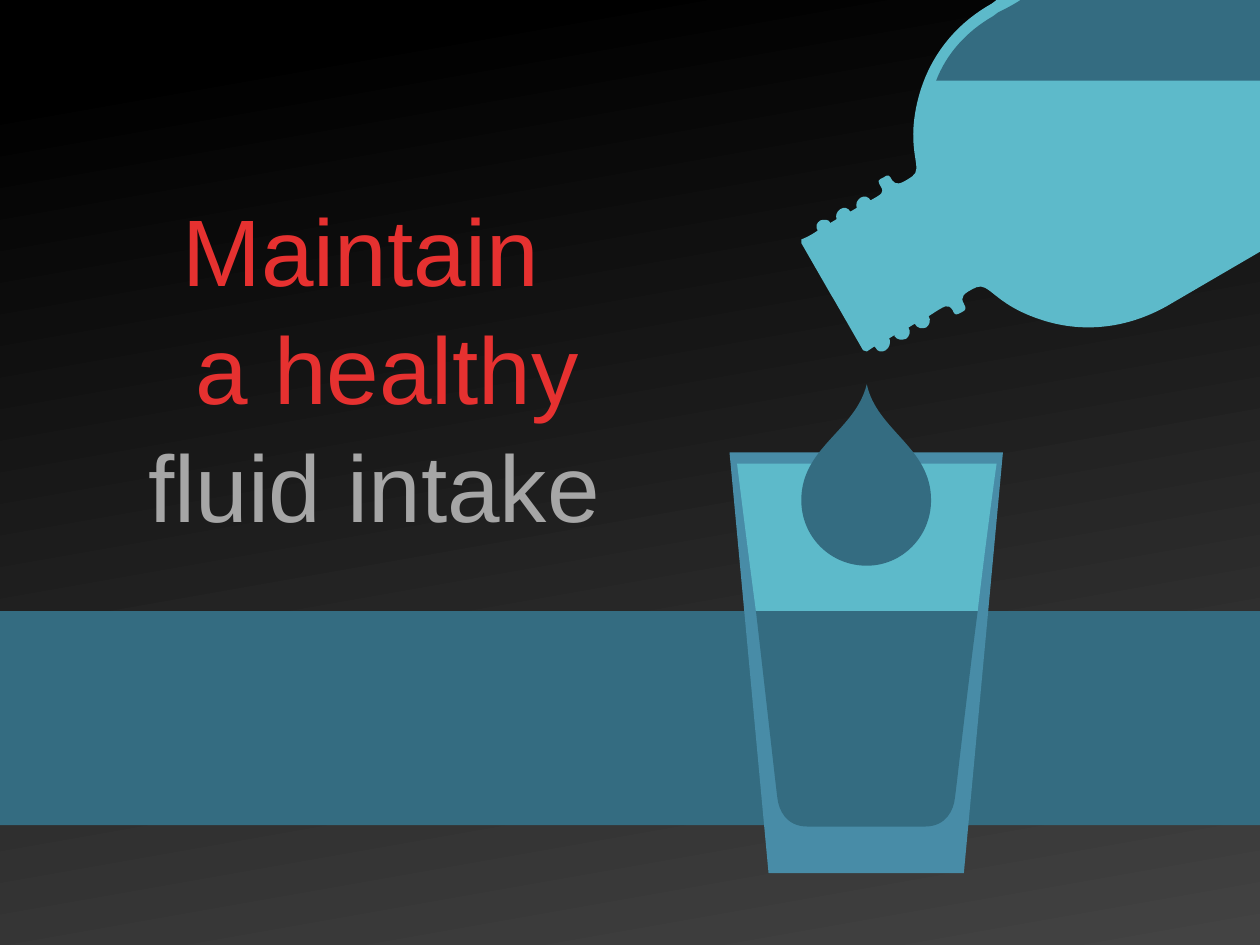
from dataclasses import dataclass

from pptx import Presentation
from pptx.dml.color import RGBColor
from pptx.enum import shapes, text
from pptx.oxml.ns import qn
from pptx.util import Inches, Pt


@dataclass(frozen=True)
class Theme:
    font: str = "Arial"
    headline_size: int = 54
    line_spacing: float = 1.04
    night: str = "000000"
    dusk: str = "434343"
    deep_water: str = "346C81"
    light_water: str = "5DBACA"
    glass: str = "488CA7"
    accent: str = "E63130"
    muted: str = "A6A6A6"


# Outlines in inches: a pair is a corner, six numbers are a Bézier curve.
GLASS = [(5.79, 3.59), (6.1, 6.93), (7.65, 6.93), (7.96, 3.59)]
GLASS_AIR = [(7.91, 3.68), (5.85, 3.68), (5.85, 3.68, 5.92, 4.25, 6, 4.85),
             (7.76, 4.85), (7.83, 4.25, 7.91, 3.68, 7.91, 3.68)]
GLASS_WATER = [
    (6, 4.85), (6.08, 5.54, 6.16, 6.26, 6.17, 6.33),
    (6.18, 6.43, 6.24, 6.56, 6.41, 6.56), (7.34, 6.56),
    (7.51, 6.56, 7.57, 6.43, 7.58, 6.33), (7.59, 6.26, 7.67, 5.54, 7.76, 4.85),
]
DROP = [
    (6.88, 3.05), (6.79, 3.42, 6.36, 3.55, 6.36, 3.97),
    (6.36, 4.26, 6.59, 4.49, 6.88, 4.49), (7.16, 4.49, 7.39, 4.26, 7.39, 3.97),
    (7.39, 3.55, 6.96, 3.42, 6.88, 3.05),
]
BOTTLE = [
    (7.91, 0), (7.9, 0.01, 7.88, 0.02, 7.87, 0.03),
    (7.55, 0.21, 7.34, 0.5, 7.27, 0.86), (7.2, 1.22, 7.33, 1.34, 7.24, 1.4),
    (7.14, 1.47, 7.11, 1.47, 7.08, 1.43), (7.06, 1.39, 7.05, 1.38, 7.01, 1.41),
    (6.97, 1.43, 6.96, 1.43, 6.99, 1.48), (7.02, 1.53, 7, 1.54, 6.91, 1.59),
    (6.89, 1.56, 6.86, 1.55, 6.83, 1.57), (6.8, 1.59, 6.79, 1.62, 6.8, 1.65),
    (6.75, 1.68), (6.73, 1.65, 6.7, 1.64, 6.67, 1.66),
    (6.64, 1.68, 6.63, 1.71, 6.64, 1.74), (6.59, 1.77),
    (6.58, 1.74, 6.54, 1.74, 6.51, 1.75), (6.48, 1.77, 6.47, 1.8, 6.49, 1.83),
    (6.42, 1.88, 6.36, 1.9, 6.36, 1.9), (6.36, 1.93), (6.59, 2.33),
    (6.62, 2.38), (6.85, 2.78), (6.88, 2.79), (6.94, 2.75),
    (6.95, 2.76), (6.96, 2.79, 7, 2.8, 7.03, 2.78),
    (7.06, 2.76, 7.07, 2.72, 7.06, 2.69), (7.05, 2.69), (7.1, 2.66),
    (7.1, 2.67), (7.12, 2.7, 7.16, 2.7, 7.19, 2.69),
    (7.22, 2.67, 7.23, 2.63, 7.21, 2.6), (7.26, 2.57),
    (7.28, 2.61, 7.32, 2.61, 7.35, 2.6), (7.38, 2.58, 7.39, 2.54, 7.37, 2.51),
    (7.51, 2.42, 7.52, 2.41, 7.56, 2.46), (7.58, 2.51, 7.59, 2.5, 7.63, 2.48),
    (7.67, 2.46, 7.67, 2.45, 7.65, 2.41), (7.62, 2.36, 7.64, 2.33, 7.75, 2.28),
    (7.85, 2.24, 7.89, 2.41, 8.24, 2.53), (8.58, 2.65, 8.94, 2.61, 9.26, 2.43),
    (10.22, 1.87), (11.88, 0.91), (12.28, 0.69), (12.28, 0),
]
BOTTLE_WATER = [
    (8.1, 0), (8.04, 0.04, 7.98, 0.07, 7.92, 0.1), (7.88, 0.13),
    (7.67, 0.25, 7.51, 0.43, 7.43, 0.64), (12.18, 0.64), (12.28, 0.58), (12.28, 0),
]


class SlideArtist:
    def __init__(self, slide, theme):
        self.slide = slide
        self.theme = theme

    def background(self):
        fill = self.slide.background.fill
        fill.gradient()
        fill.gradient_angle = 280  # counter-clockwise
        stops = ((0.08, self.theme.night), (1, self.theme.dusk))
        for stop, (position, color) in zip(fill.gradient_stops, stops):
            stop.position = position
            stop.color.rgb = RGBColor.from_string(color)

    def paint(self, shape, color):
        shape.shadow.inherit = False
        shape.fill.solid()
        shape.fill.fore_color.rgb = RGBColor.from_string(color)
        shape.line.fill.background()

    def band(self, left, top, width, height, color):
        band = self.slide.shapes.add_shape(
            shapes.MSO_SHAPE.RECTANGLE, *map(Inches, (left, top, width, height)))
        self.paint(band, color)

    def headline(self, left, top, width, height, lines):
        box = self.slide.shapes.add_textbox(*map(Inches, (left, top, width, height)))
        frame = box.text_frame
        frame.word_wrap = True
        frame.auto_size = text.MSO_AUTO_SIZE.SHAPE_TO_FIT_TEXT
        paragraph = frame.paragraphs[0]
        paragraph.alignment = text.PP_ALIGN.CENTER
        paragraph.line_spacing = self.theme.line_spacing
        paragraph.font.name = self.theme.font
        paragraph.font.size = Pt(self.theme.headline_size)
        for index, (words, color) in enumerate(lines):
            if index:
                paragraph.add_line_break()
            run = paragraph.add_run()
            run.text = words
            run.font.color.rgb = RGBColor.from_string(color)

    def outline(self, group, segments, color):
        """Draw a closed outline, turning triples of points into Bézier curves."""
        start, *steps = [list(zip(s[::2], s[1::2])) for s in segments]
        builder = group.shapes.build_freeform(*map(Inches, start[0]))
        builder.add_line_segments(
            [(Inches(x), Inches(y)) for step in steps for x, y in step], close=True)
        shape = builder.convert_to_shape()
        nodes = iter(list(shape._element.iter(qn("a:lnTo"))))
        for step in steps:
            first, *rest = [next(nodes) for _ in step]
            if rest:
                first.tag = qn("a:cubicBezTo")
            for node in rest:
                first.append(node[0])
                node.getparent().remove(node)
        self.paint(shape, color)


def main():
    deck = Presentation()
    deck.slide_width, deck.slide_height = Inches(10), Inches(7.5)
    theme = Theme()
    artist = SlideArtist(deck.slides.add_slide(deck.slide_layouts[6]), theme)
    artist.background()
    artist.band(0, 4.85, 10, 1.7, theme.deep_water)
    artist.headline(0.29, 1.44, 5.36, 2.83, [
        ("Maintain ", theme.accent),
        (" a healthy", theme.accent),
        ("fluid intake", theme.muted),
    ])
    pouring = artist.slide.shapes.add_group_shape()
    for segments, color in (
        (GLASS, theme.glass),
        (GLASS_AIR, theme.light_water),
        (GLASS_WATER, theme.deep_water),
        (DROP, theme.deep_water),
        (BOTTLE, theme.light_water),
        (BOTTLE_WATER, theme.deep_water),
    ):
        artist.outline(pouring, segments, color)
    deck.save("out.pptx")


if __name__ == "__main__":
    main()
